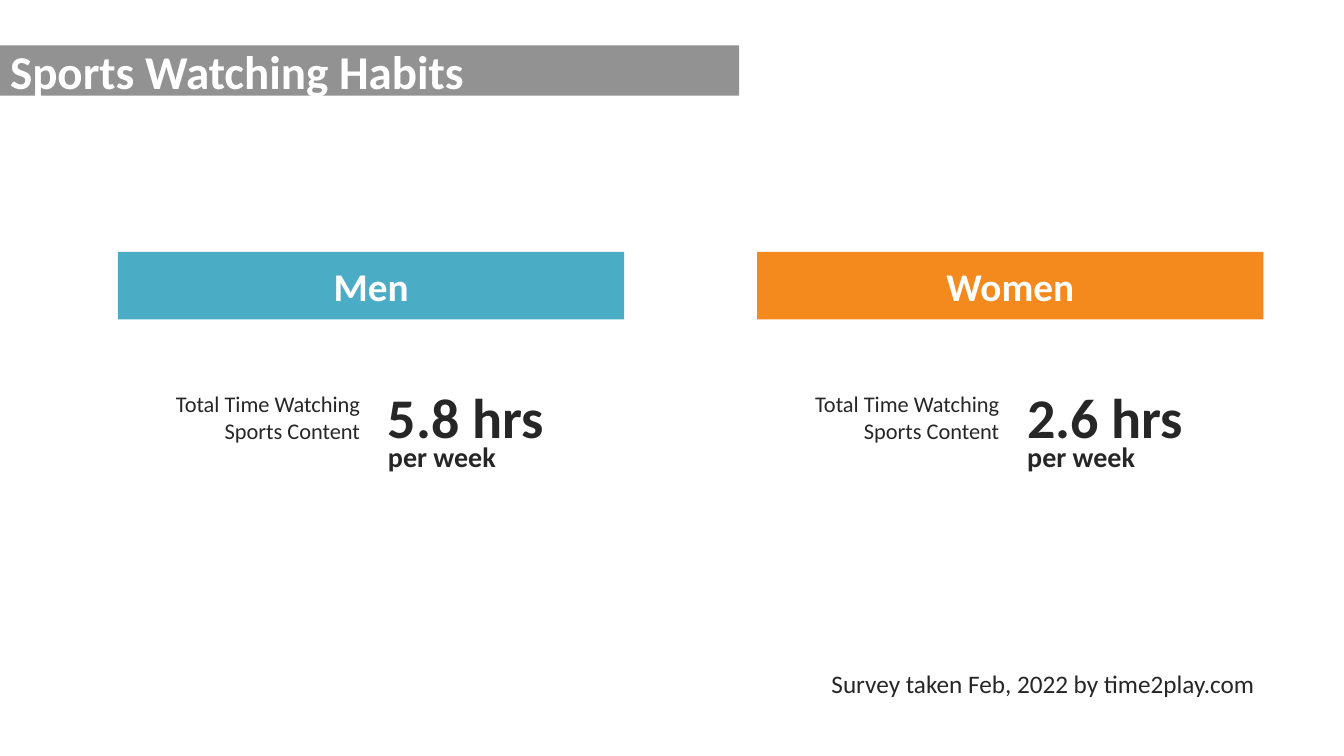
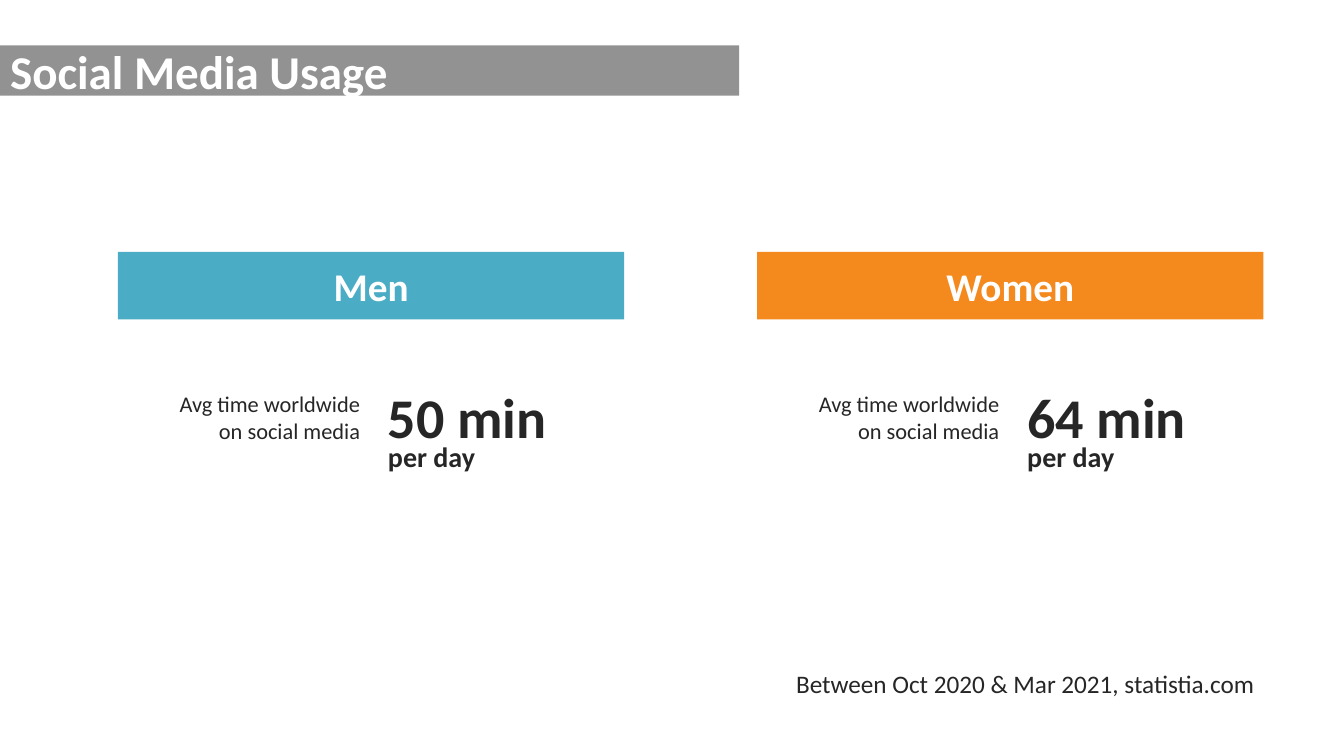
import pptx
import pptx.util
import pptx.dml.color
import pptx.enum.shapes
import pptx.enum.text

RGB = pptx.dml.color.RGBColor
ALIGN = pptx.enum.text.PP_ALIGN
ANCHOR = pptx.enum.text.MSO_ANCHOR

PX = 9144  # EMU per px, 100 px to the inch
FONT = "Calibri"
WHITE = RGB(0xFF, 0xFF, 0xFF)
INK = RGB(0x26, 0x26, 0x26)
GREY = RGB(0x92, 0x92, 0x92)
BLUE = RGB(0x4B, 0xAC, 0xC6)
ORANGE = RGB(0xF4, 0x89, 0x1E)

# Heading, colour and left edge of each column
COLUMNS = [("Men", BLUE, 117), ("Women", ORANGE, 751)]

# Title, label, values by column, unit, source
SLIDES = [
    ("Sports Watching Habits", "Total Time Watching Sports Content",
     ["5.8 hrs", "2.6 hrs"], "per week",
     "Survey taken Feb, 2022 by time2play.com"),
    ("Social Media Usage", "Avg time worldwide on social media",
     ["50 min", "64 min"], "per day",
     "Between Oct 2020 & Mar 2021, statistia.com"),
]


def px(*sizes):
    return [pptx.util.Emu(size * PX) for size in sizes]


def write(shape, text, size, color=INK, bold=False, align=ALIGN.LEFT,
          anchor=ANCHOR.TOP):
    frame = shape.text_frame
    frame.text = text
    frame.word_wrap = True
    frame.auto_size = pptx.enum.text.MSO_AUTO_SIZE.NONE
    frame.vertical_anchor = anchor
    line = frame.paragraphs[0]
    line.alignment = align
    font = line.runs[0].font
    font.name = FONT
    font.size = pptx.util.Pt(size)
    font.bold = bold
    font.color.rgb = color


def paint(shape, color):
    shape.fill.solid()
    shape.fill.fore_color.rgb = color
    shape.line.fill.background()


def add_title(slide, text):
    title = slide.shapes.title
    title.left, title.top, title.width, title.height = px(0, 45, 733, 50)
    paint(title, GREY)
    write(title, text, 33.6, WHITE, True, anchor=ANCHOR.MIDDLE)


def add_text(shapes, box, text, size, **style):
    write(shapes.add_textbox(*px(*box)), text, size, **style)


def add_column(slide, head, color, left, label, value, unit):
    shapes = slide.shapes.add_group_shape().shapes
    band = shapes.add_shape(pptx.enum.shapes.MSO_SHAPE.RECTANGLE,
                            *px(left, 250, 502, 67))
    band.shadow.inherit = False
    paint(band, color)
    write(band, head, 28, WHITE, True, ALIGN.CENTER, ANCHOR.MIDDLE)
    add_text(shapes, (left + 25, 382, 225, 64), label, 16, align=ALIGN.RIGHT)
    add_text(shapes, (left + 258, 375, 194, 77), value, 40, bold=True)
    add_text(shapes, (left + 258, 431, 150, 44), unit, 20, bold=True)


def main():
    deck = pptx.Presentation()
    deck.slide_width, deck.slide_height = px(1333, 750)
    layout = deck.slide_layouts.get_by_name("Title Only")
    for title, label, values, unit, source in SLIDES:
        slide = deck.slides.add_slide(layout)
        add_title(slide, title)
        for (head, color, left), value in zip(COLUMNS, values):
            add_column(slide, head, color, left, label, value, unit)
        add_text(slide.shapes, (717, 658, 537, 40), source, 18,
                 align=ALIGN.RIGHT)
    deck.save("out.pptx")


if __name__ == "__main__":
    main()
